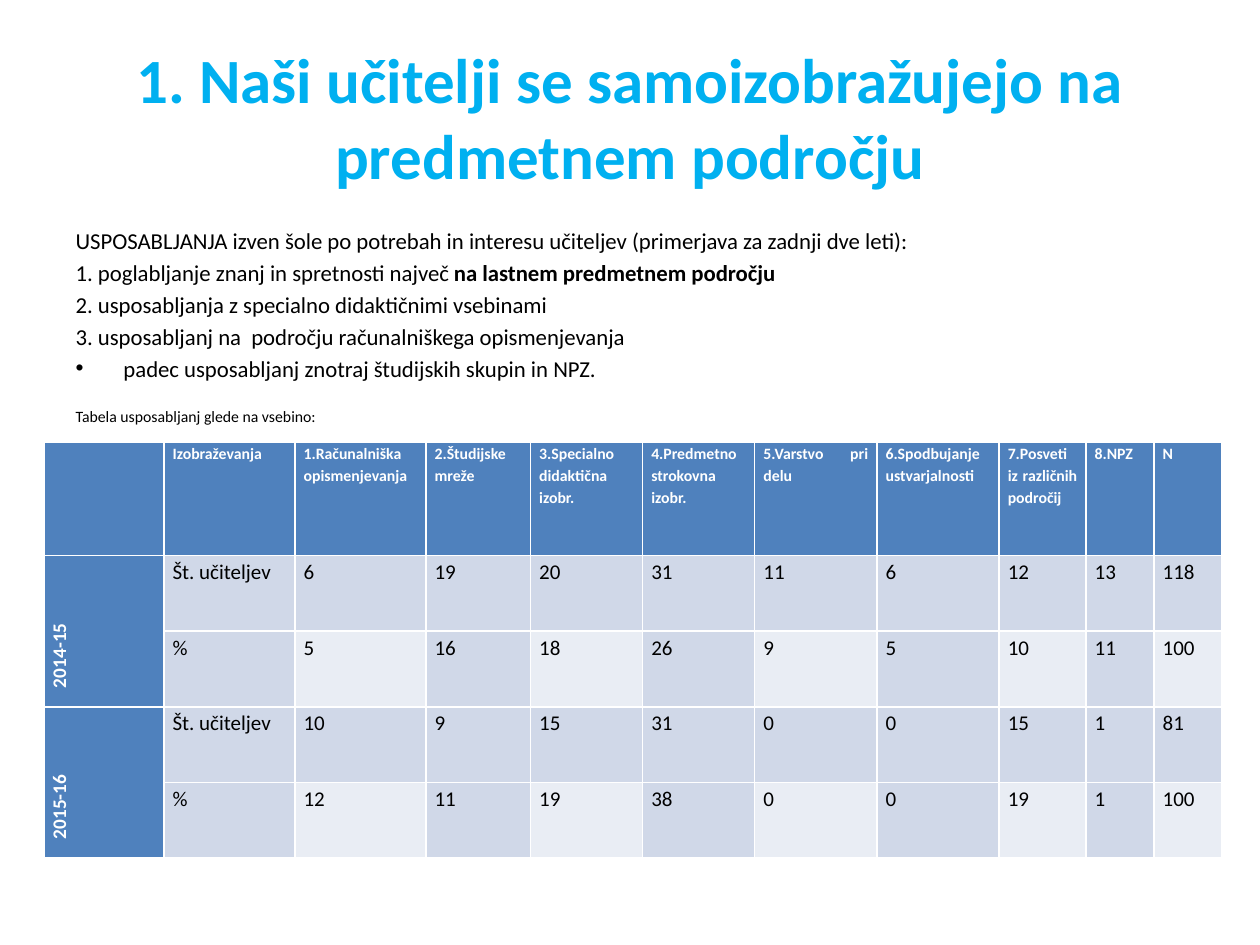
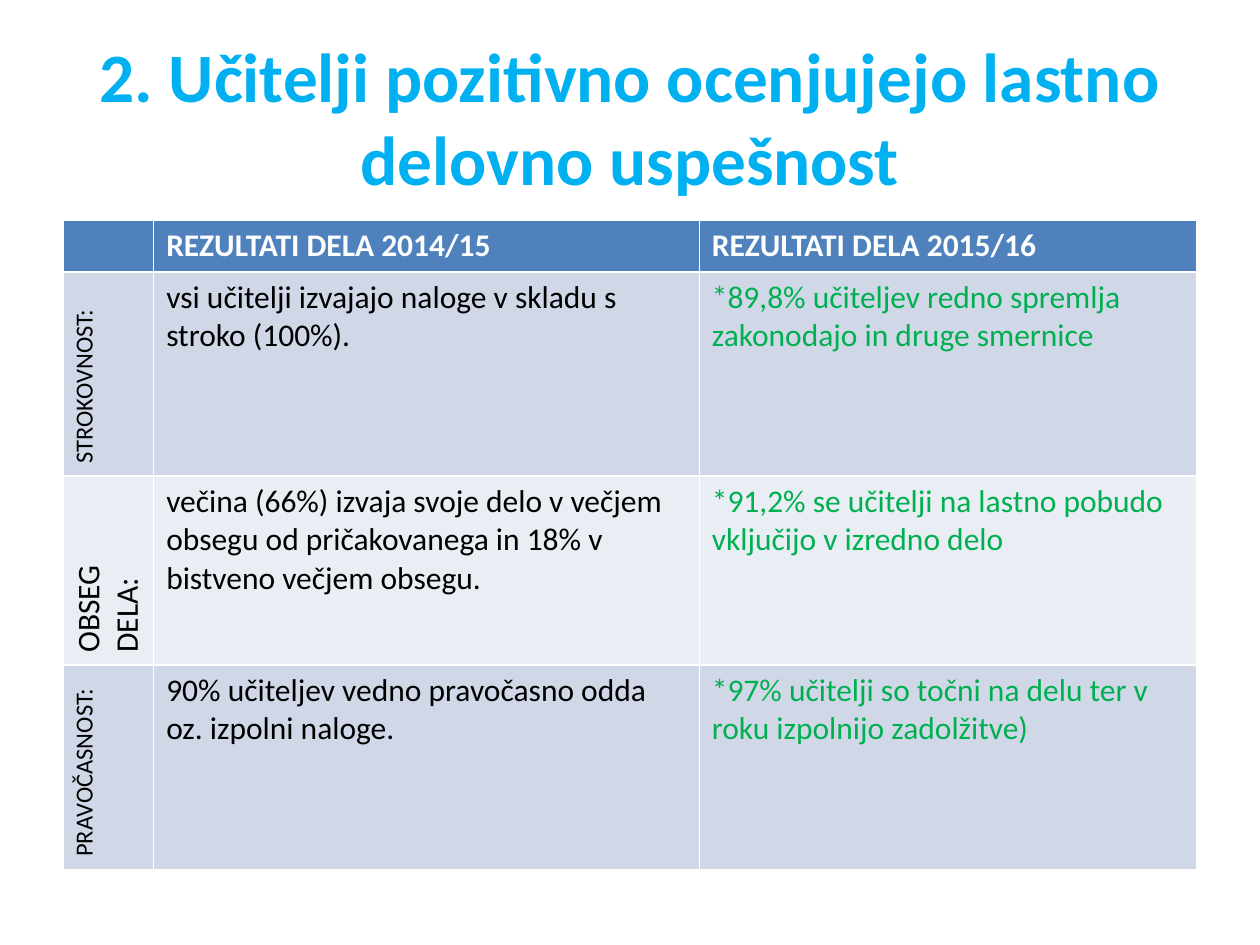
from lxml.etree import SubElement
from pptx import Presentation
from pptx.dml.color import RGBColor
from pptx.enum.text import MSO_AUTO_SIZE, PP_ALIGN
from pptx.oxml.ns import qn
from pptx.util import Inches, Pt

FONT = "Calibri"
SKY, BLUE, GREEN = "00B0F0", "4F81BD", "00B050"
BAND, LIGHT_BAND = "D0D8E8", "E9EDF4"
BLACK, WHITE = "000000", "FFFFFF"

INTRO = [
    "USPOSABLJANJA izven šole po potrebah in interesu učiteljev (primerjava za zadnji dve leti):",
    ("1. poglabljanje znanj in spretnosti največ ", "na lastnem predmetnem področju"),
    "2. usposabljanja z specialno didaktičnimi vsebinami",
    "3. usposabljanj na  področju računalniškega opismenjevanja",
]
DROP_NOTE = "padec usposabljanj znotraj študijskih skupin in NPZ."
TABLE_CAPTION = "Tabela usposabljanj glede na vsebino:"

TRAINING_WIDTHS = [0.95, 1.04, 1.04, 0.83, 0.89, 0.89, 0.97, 0.97, 0.69, 0.54, 0.54]
TRAINING_HEIGHTS = [0.9] + [0.6] * 4
TRAINING_ROWS = [
    ["", "Izobraževanja", "1.Računalniška\nopismenjevanja", "2.Študijske mreže",
     "3.Specialno didaktična\nizobr.", "4.Predmetno strokovna\nizobr.",
     "5.Varstvo pri delu", "6.Spodbujanje\nustvarjalnosti",
     "7.Posveti iz različnih področij", "8.NPZ", "N"],
    ["2014-15", "Št. učiteljev", 6, 19, 20, 31, 11, 6, 12, 13, 118],
    ["", "%", 5, 16, 18, 26, 9, 5, 10, 11, 100],
    ["2015-16", "Št. učiteljev", 10, 9, 15, 31, 0, 0, 15, 1, 81],
    ["", "%", 12, 11, 19, 38, 0, 0, 19, 1, 100],
]

RESULT_WIDTHS = [0.72, 4.33, 3.95]
RESULT_HEIGHTS = [0.41, 1.62, 1.5, 1.62]
RESULT_ROWS = [
    ["", "REZULTATI DELA 2014/15", "REZULTATI DELA 2015/16"],
    ["STROKOVNOST:", "vsi učitelji izvajajo naloge v skladu s stroko (100%).",
     "*89,8% učiteljev redno spremlja zakonodajo in druge smernice"],
    ["OBSEG DELA:",
     "večina (66%) izvaja svoje delo v večjem obsegu od pričakovanega in 18% v bistveno večjem obsegu.",
     "*91,2% se učitelji na lastno pobudo vključijo v izredno delo"],
    ["PRAVOČASNOST:", "90% učiteljev vedno pravočasno odda oz. izpolni naloge.",
     "*97% učitelji so točni na delu ter v roku izpolnijo zadolžitve)"],
]


def rgb(color):
    return RGBColor.from_string(color)


def place(item, left, top, width, height):
    item.left, item.top = Inches(left), Inches(top)
    item.width, item.height = Inches(width), Inches(height)


def style_font(paragraph, size, color=BLACK, bold=False):
    font = paragraph.font
    font.name, font.size, font.bold = FONT, Pt(size), bold
    font.color.rgb = rgb(color)


def indent(paragraph, margin, first_line=0):
    properties = paragraph._p.get_or_add_pPr()
    properties.set("marL", str(Inches(margin)))
    properties.set("indent", str(Inches(first_line)))
    return properties


def add_title(slide, text, size):
    title = slide.shapes.title
    place(title, 0.5, 0.3, 9, 1.25)
    title.text_frame.text = text
    title.text_frame.auto_size = MSO_AUTO_SIZE.NONE
    style_font(title.text_frame.paragraphs[0], size, SKY, True)


def add_line(paragraph, text, size=13, gap=2.6, bulleted=False):
    paragraph.space_before = Pt(gap)
    if bulleted:
        SubElement(indent(paragraph, 0.38, -0.38), qn("a:buChar"), char="•")
    else:
        SubElement(indent(paragraph, 0), qn("a:buNone"))
    style_font(paragraph, size)
    if isinstance(text, tuple):
        plain, strong = text
        paragraph.add_run().text = plain
        emphasis = paragraph.add_run()
        emphasis.text, emphasis.font.bold = strong, True
    else:
        paragraph.add_run().text = text


def add_intro(slide):
    body = slide.placeholders[1]
    place(body, 0.5, 1.75, 9, 5.46)
    frame = body.text_frame
    frame.auto_size = MSO_AUTO_SIZE.NONE
    add_line(frame.paragraphs[0], INTRO[0])
    for text in INTRO[1:]:
        add_line(frame.add_paragraph(), text)
    add_line(frame.add_paragraph(), DROP_NOTE, bulleted=True)
    add_line(frame.add_paragraph(), TABLE_CAPTION, size=9, gap=14.5)


def add_grid(slide, left, top, widths, heights, rows, format_cell):
    """Fill a table, leaving the look of each cell to format_cell."""
    table = slide.shapes.add_table(
        len(rows), len(widths), Inches(left), Inches(top),
        Inches(sum(widths)), Inches(sum(heights))).table
    for column, width in zip(table.columns, widths):
        column.width = Inches(width)
    for r, (row, height) in enumerate(zip(rows, heights)):
        table.rows[r].height = Inches(height)
        for c, value in enumerate(row):
            cell = table.cell(r, c)
            cell.text = str(value)
            cell.fill.solid()
            format_cell(cell, r, c)
    return table


def turn_upward(cell):
    cell._tc.get_or_add_tcPr().set("vert", "vert270")


def format_training(cell, r, c):
    is_header, is_year = r == 0, c == 0
    if is_header or is_year:
        fill = BLUE
    else:
        fill = LIGHT_BAND if r % 2 == 0 and c % 2 == 0 else BAND
    cell.fill.fore_color.rgb = rgb(fill)
    cell.margin_left = cell.margin_right = Inches(0.07)
    cell.margin_top = cell.margin_bottom = 0
    size = 9 if is_header else 11 if is_year else 12
    for paragraph in cell.text_frame.paragraphs:
        paragraph.alignment = PP_ALIGN.JUSTIFY
        paragraph.line_spacing = 1.15
        style_font(paragraph, size, WHITE if fill == BLUE else BLACK, fill == BLUE)
        if is_year and not is_header:
            indent(paragraph, 0.08)
    if is_year and not is_header:
        turn_upward(cell)


def format_result(cell, r, c):
    is_header = r == 0
    fill = BLUE if is_header else BAND if r % 2 else LIGHT_BAND
    cell.fill.fore_color.rgb = rgb(fill)
    color = WHITE if is_header else GREEN if c == 2 else BLACK
    # The two long row labels are smaller
    size = 14 if c == 0 and r in (1, 3) else 18
    style_font(cell.text_frame.paragraphs[0], size, color, is_header)
    if c == 0 and not is_header:
        turn_upward(cell)


def main():
    deck = Presentation()
    deck.slide_width, deck.slide_height = Inches(10), Inches(7.5)

    # Training by subject
    training = deck.slides.add_slide(deck.slide_layouts[1])
    add_title(training, "1. Naši učitelji se samoizobražujejo na predmetnem področju", 36)
    add_intro(training)
    years = add_grid(training, 0.35, 3.51, TRAINING_WIDTHS, TRAINING_HEIGHTS,
                     TRAINING_ROWS, format_training)
    for first in (1, 3):
        years.cell(first, 0).merge(years.cell(first + 1, 0))

    # Results of work
    results = deck.slides.add_slide(deck.slide_layouts[5])
    add_title(results, "2. Učitelji pozitivno ocenjujejo lastno delovno uspešnost", 39.6)
    add_grid(results, 0.5, 1.75, RESULT_WIDTHS, RESULT_HEIGHTS, RESULT_ROWS, format_result)

    deck.save("out.pptx")


if __name__ == "__main__":
    main()
